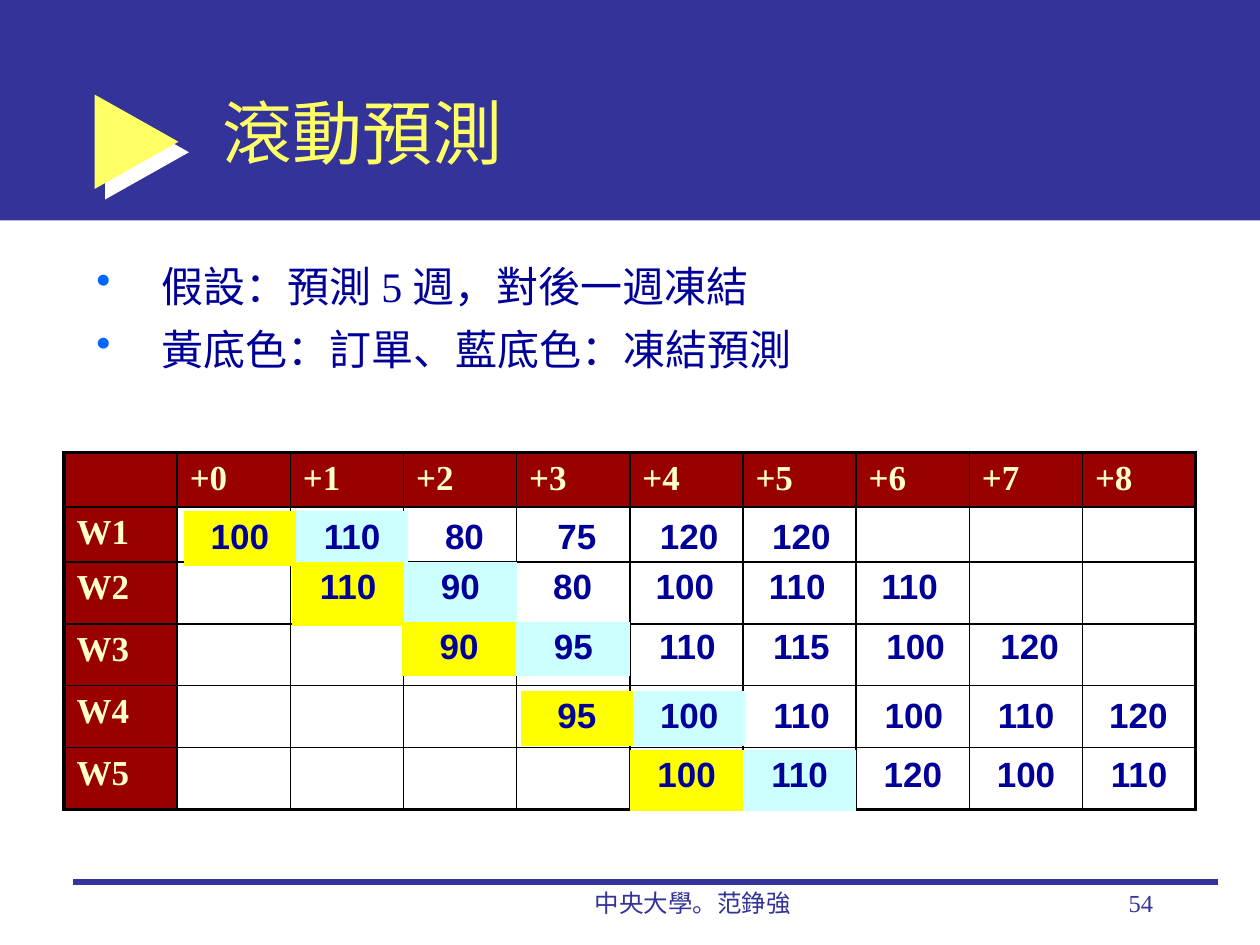
from lxml import etree
from pptx import Presentation
from pptx.dml.color import RGBColor
from pptx.enum.shapes import MSO_CONNECTOR as Connector, MSO_SHAPE as Shape
from pptx.enum.text import MSO_ANCHOR as Anchor, PP_ALIGN as Align
from pptx.oxml import parse_xml
from pptx.oxml.ns import nsdecls, qn
from pptx.util import Inches, Pt

NAVY = RGBColor(0x33, 0x33, 0x99)
INK = RGBColor(0x00, 0x00, 0x99)
BULLET = RGBColor(0x00, 0x66, 0xFF)
LEMON = RGBColor(0xFF, 0xFF, 0x66)
CREAM = RGBColor(0xFF, 0xFF, 0xCC)
MAROON = RGBColor(0x99, 0x00, 0x00)
ORDER = RGBColor(0xFF, 0xFF, 0x00)
FROZEN = RGBColor(0xCC, 0xFF, 0xFF)
WHITE = RGBColor(0xFF, 0xFF, 0xFF)
BLACK = RGBColor(0x00, 0x00, 0x00)

SERIF, SANS = "Times New Roman", "Arial"
GRID_COLUMNS, GRID_ROWS = 120, 90
PLAIN_TABLE = "{2D5ABB26-0587-4C30-8999-92F81FD0307C}"

WEEKS = [
    ((17.5, 48.7, 64.2, 5.2), [100, 110, 80, 75, 120, 120]),
    ((27.8, 53.5, 64.2, 6.1), [110, 90, 80, 100, 110, 110]),
    ((38.3, 59.2, 65.2, 5.2), [90, 95, 110, 115, 100, 120]),
    ((49.6, 65.8, 64.2, 5.2), [95, 100, 110, 100, 110, 120]),
    ((60, 71.4, 53.9, 5.8), [100, 110, 120, 100, 110]),
]


class Composer:
    def __init__(self):
        self.deck = Presentation()
        self.deck.slide_width, self.deck.slide_height = Inches(10), Inches(7.5)
        self.page = self.deck.slides.add_slide(self.deck.slide_layouts[6])

    def place(self, left, top, width, height):
        across = self.deck.slide_width / GRID_COLUMNS
        down = self.deck.slide_height / GRID_ROWS
        return [round(v) for v in (left * across, top * down, width * across, height * down)]

    def style(self, para, font, size, color, bold=False):
        for span in para.runs:
            span.font.name, span.font.size = font, Pt(size)
            span.font.bold = bold
            span.font.color.rgb = color

    def shape(self, kind, area, color):
        shape = self.page.shapes.add_shape(kind, *self.place(*area))
        shape.shadow.inherit = False
        shape.fill.solid()
        shape.fill.fore_color.rgb = color
        shape.line.fill.background()
        return shape

    def marker(self, area, color, shadow):
        arrow = self.shape(Shape.RIGHT_ARROW, area, color)
        arrow.adjustments[0], arrow.adjustments[1] = 0.38, 1
        effects = arrow._element.spPr.find(qn("a:effectLst"))
        effects.append(parse_xml(
            f'<a:outerShdw {nsdecls("a")} dist="{Pt(8.5)}" dir="2700000" algn="ctr" '
            f'rotWithShape="0"><a:srgbClr val="{shadow}"/></a:outerShdw>'))

    def rule(self, left, right, row, color, width):
        x, y, span, _ = self.place(left, row, right - left, 0)
        line = self.page.shapes.add_connector(Connector.STRAIGHT, x, y, x + span, y)
        line.line.color.rgb, line.line.width = color, Pt(width)
        etree.SubElement(line._element.spPr, qn("a:effectLst"))

    def text(self, area, lines, font, size, color, align=Align.LEFT,
             anchor=Anchor.TOP, bullet=None):
        frame = self.page.shapes.add_textbox(*self.place(*area)).text_frame
        frame.word_wrap = True
        frame.vertical_anchor = anchor
        frame.text = "\n".join(lines)
        for index, para in enumerate(frame.paragraphs):
            para.alignment = align
            if index:
                para.space_before = Pt(size * 0.3)
            if bullet:
                self.bullet(para, bullet)
            self.style(para, font, size, color)

    def bullet(self, para, color):
        properties = para._p.get_or_add_pPr()
        properties.set("marL", str(Inches(0.52)))
        properties.set("indent", str(-Inches(0.52)))
        tint = etree.SubElement(properties, qn("a:buClr"))
        etree.SubElement(tint, qn("a:srgbClr"), val=str(color))
        etree.SubElement(properties, qn("a:buChar"), char="•")

    def table(self, area, rows, heights=None):
        box = self.place(*area)
        table = self.page.shapes.add_table(len(rows), len(rows[0]), *box).table
        table.first_row = table.horz_banding = False
        table._tbl.tblPr.find(qn("a:tableStyleId")).text = PLAIN_TABLE
        for column in table.columns:
            column.width = round(box[2] / len(rows[0]))
        for row, height in zip(table.rows, heights or [area[3]]):
            row.height = self.place(0, 0, 0, height)[3]
        for row, values in zip(table.rows, rows):
            for cell, value in zip(row.cells, values):
                cell.text_frame.text = str(value)
        return table

    def paint(self, cell, color):
        if color is None:
            cell.fill.background()
        else:
            cell.fill.solid()
            cell.fill.fore_color.rgb = color

    def border(self, cell, widths):
        properties = cell._tc.get_or_add_tcPr()
        for index, (side, width) in enumerate(zip("LRTB", widths)):
            properties.insert(index, parse_xml(
                f'<a:ln{side} {nsdecls("a")} w="{Pt(width)}"><a:solidFill>'
                f'<a:srgbClr val="{BLACK}"/></a:solidFill></a:ln{side}>'))

    def calendar(self, area, rows, heights):
        table = self.table(area, rows, heights)
        last_row, last_column = len(rows) - 1, len(rows[0]) - 1
        for r, row in enumerate(table.rows):
            for c, cell in enumerate(row.cells):
                self.paint(cell, MAROON if r == 0 or c == 0 else None)
                edges = (c == 0, c == last_column, r == 0, r == last_row)
                self.border(cell, [2.25 if edge else 1 for edge in edges])
                self.style(cell.text_frame.paragraphs[0], SERIF, 20, CREAM, True)

    def forecast(self, area, values):
        table = self.table(area, [values])
        colors = [ORDER, FROZEN] + [None] * (len(values) - 2)
        for cell, color in zip(table.rows[0].cells, colors):
            self.paint(cell, color)
            para = cell.text_frame.paragraphs[0]
            para.alignment = Align.CENTER
            self.style(para, SANS, 20, INK, True)


def main():
    composer = Composer()
    composer.shape(Shape.RECTANGLE, (0, 0, 120, 21), NAVY)
    composer.marker((9, 9, 8, 9), LEMON, WHITE)
    composer.rule(7, 116, 84, NAVY, 3)
    composer.text((47, 84, 38, 6), ["中央大學。范錚強"], SERIF, 14, NAVY, Align.CENTER)
    composer.text((86, 84, 25, 6), ["54"], SERIF, 14, NAVY, Align.RIGHT)
    composer.text((20, 5, 91, 15), ["滾動預測"], SANS, 40, LEMON, anchor=Anchor.MIDDLE)
    composer.text((8, 24.2, 106.8, 13.2),
                  ["假設：預測 5 週，對後一週凍結", "黃底色：訂單、藍底色：凍結預測"],
                  SERIF, 24, INK, bullet=BULLET)

    header = [""] + [f"+{week}" for week in range(9)]
    body = [[f"W{week}"] + [""] * 9 for week in range(1, 6)]
    composer.calendar((6.1, 43.1, 107.8, 34), [header] + body, [5.2] * 2 + [5.9] * 4)
    for area, values in WEEKS:
        composer.forecast(area, values)
    composer.deck.save("out.pptx")


if __name__ == "__main__":
    main()
